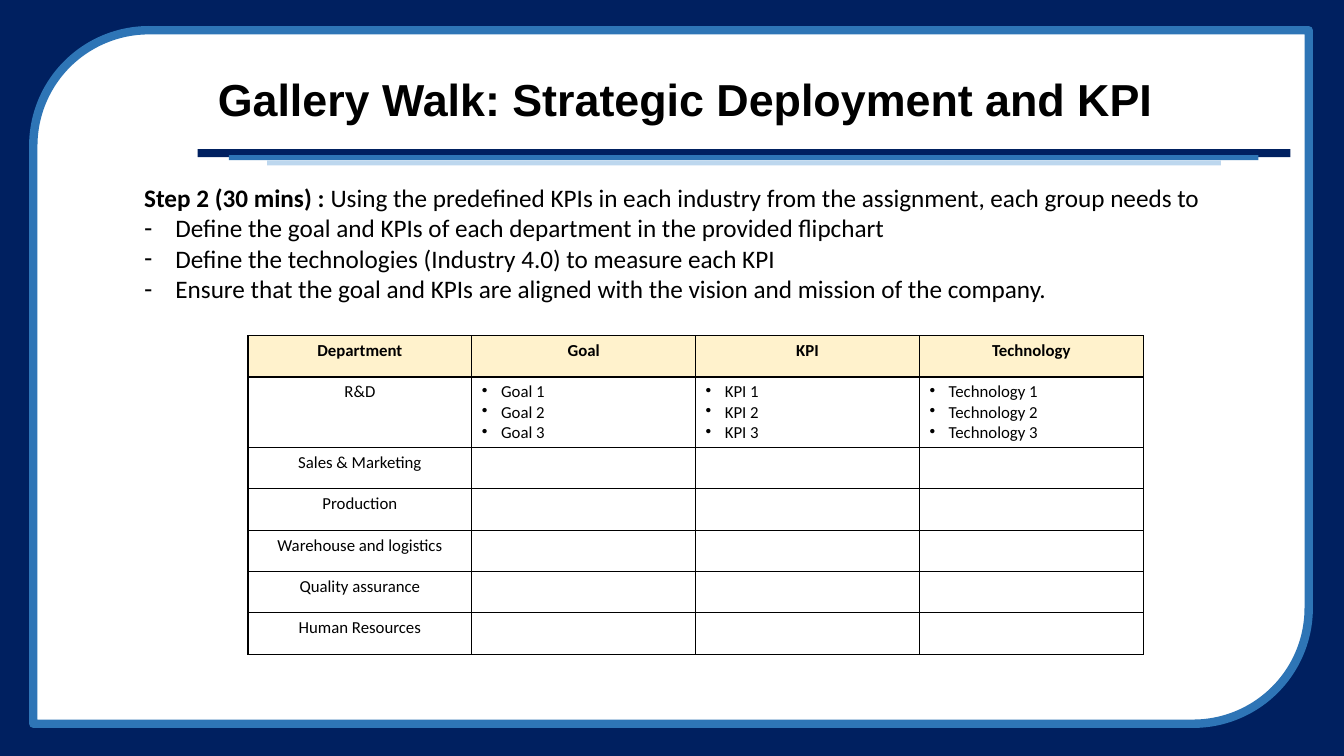
from lxml.etree import SubElement
from pptx import Presentation
from pptx.dml.color import RGBColor
from pptx.enum.shapes import MSO_SHAPE
from pptx.enum.text import MSO_ANCHOR, MSO_AUTO_SIZE, PP_ALIGN
from pptx.oxml.ns import qn
from pptx.util import Inches, Pt

COLORS = {
    "navy": "002060",
    "blue": "2E75B6",
    "pale_blue": "BDD7EE",
    "cream": "FFF2CC",
    "white": "FFFFFF",
    "black": "000000",
}


def set_bullet(paragraph, character, indent):
    properties = paragraph._p.get_or_add_pPr()
    properties.set("marL", str(Inches(indent)))
    properties.set("indent", str(-Inches(indent)))
    if character:
        SubElement(properties, qn("a:buChar"), char=character)
    else:
        SubElement(properties, qn("a:buNone"))


def format_run(run, size, bold=False, font_name="Calibri"):
    run.font.name = font_name
    run.font.size = Pt(size)
    run.font.bold = bold
    run.font.color.rgb = RGBColor.from_string(COLORS["black"])


presentation = Presentation()
presentation.slide_width = Inches(13.33)
presentation.slide_height = Inches(7.5)
slide = presentation.slides.add_slide(presentation.slide_layouts[1])
title = slide.shapes.title
body = slide.placeholders[1]

panels = [
    (MSO_SHAPE.RECTANGLE, 0, 0, 13.33, 7.5, "navy"),
    (MSO_SHAPE.ROUND_2_DIAG_RECTANGLE, 0.33, 0.3, 12.65, 6.88, "white"),
    (MSO_SHAPE.RECTANGLE, 1.96, 1.48, 10.84, 0.08, "navy"),
    (MSO_SHAPE.RECTANGLE, 2.27, 1.54, 10.21, 0.05, "blue"),
    (MSO_SHAPE.RECTANGLE, 2.65, 1.59, 9.46, 0.05, "pale_blue"),
]
for preset, left, top, width, height, color in panels:
    shape = slide.shapes.add_shape(
        preset, Inches(left), Inches(top), Inches(width), Inches(height))
    shape.shadow.inherit = False
    shape.fill.solid()
    shape.fill.fore_color.rgb = RGBColor.from_string(COLORS[color])
    if color == "white":
        shape.line.color.rgb = RGBColor.from_string(COLORS["blue"])
        shape.line.width = Pt(6)
    else:
        shape.line.fill.background()

for placeholder in (title, body):
    slide.shapes._spTree.append(placeholder._element)

title.left, title.top = Inches(2.06), Inches(0.53)
title.width, title.height = Inches(10.84), Inches(0.97)
title.text_frame.text = "Gallery Walk: Strategic Deployment and KPI"
title.text_frame.vertical_anchor = MSO_ANCHOR.MIDDLE
title.text_frame.auto_size = MSO_AUTO_SIZE.NONE
heading = title.text_frame.paragraphs[0]
heading.alignment = PP_ALIGN.LEFT
heading.line_spacing = 0.9
format_run(heading.runs[0], 32, True, "Arial")

body.left, body.top = Inches(1.33), Inches(1.76)
body.width, body.height = Inches(10.85), Inches(1.31)
body.text_frame.auto_size = MSO_AUTO_SIZE.SHAPE_TO_FIT_TEXT
steps = [
    "Define the goal and KPIs of each department in the provided flipchart",
    "Define the technologies (Industry 4.0) to measure each KPI",
    "Ensure that the goal and KPIs are aligned with the vision and mission of the company.",
]
introduction = body.text_frame.paragraphs[0]
set_bullet(introduction, None, 0)
introduction.space_before = Pt(0)
step_label = introduction.add_run()
step_label.text = "Step 2 (30 mins) : "
format_run(step_label, 18, True)
step_text = introduction.add_run()
step_text.text = ("Using the predefined KPIs in each industry from the assignment, "
                  "each group needs to")
format_run(step_text, 18)
for step in steps:
    paragraph = body.text_frame.add_paragraph()
    paragraph.text = step
    set_bullet(paragraph, "-", 0.31)
    paragraph.space_before = Pt(0)
    format_run(paragraph.runs[0], 18)

headers = ["Department", "Goal", "KPI", "Technology"]
departments = ["R&D", "Sales & Marketing", "Production", "Warehouse and logistics",
               "Quality assurance", "Human Resources"]
rows = [headers] + [[department, "", "", ""] for department in departments]
for column_index, header in enumerate(headers[1:], 1):
    rows[1][column_index] = "\n".join(f"{header} {number}" for number in range(1, 4))

table = slide.shapes.add_table(
    len(rows), len(headers), Inches(2.46), Inches(3.33), Inches(8.89), Inches(3.13)).table
for column in table.columns:
    column.width = Inches(2.22)
for row_index, row in enumerate(rows):
    table.rows[row_index].height = Inches(0.7 if row_index == 1 else 0.41)
    for column_index, text in enumerate(row):
        cell = table.cell(row_index, column_index)
        cell_properties = cell._tc.get_or_add_tcPr()
        for side in ("lnL", "lnR", "lnT", "lnB"):
            border = SubElement(cell_properties, qn(f"a:{side}"), w=str(Pt(1)))
            border_fill = SubElement(border, qn("a:solidFill"))
            SubElement(border_fill, qn("a:srgbClr"), val=COLORS["black"])
        cell.fill.solid()
        cell.fill.fore_color.rgb = RGBColor.from_string(
            COLORS["cream" if row_index == 0 else "white"])
        cell.text_frame.text = text
        for paragraph in cell.text_frame.paragraphs:
            if row_index == 0 or column_index == 0:
                paragraph.alignment = PP_ALIGN.CENTER
            elif text:
                set_bullet(paragraph, "•", 0.19)
            for run in paragraph.runs:
                format_run(run, 12, row_index == 0)

presentation.save("out.pptx")
